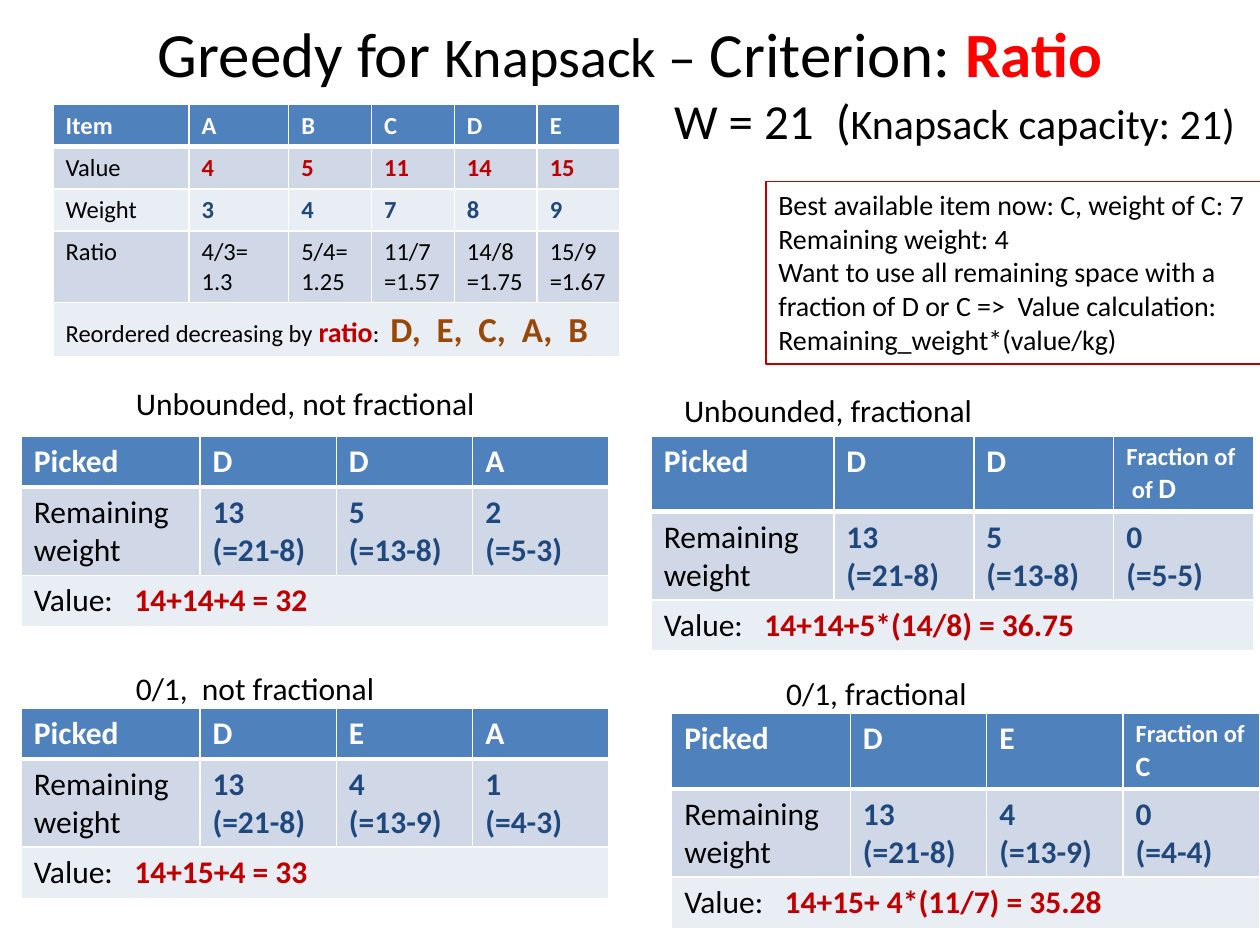
from typing import NamedTuple

from lxml import etree
from pptx import Presentation
from pptx import util as u
from pptx.dml.color import RGBColor
from pptx.enum import shapes, text
from pptx.oxml import ns

FONT = "Calibri"
COLORS = {
    "black": "000000",
    "white": "FFFFFF",
    "red": "FF0000",
    "value": "C00000",
    "weight": "1F497D",
    "order": "984807",
    "header": "4F81BD",
    "band_dark": "D0D8E8",
    "band_light": "E9EDF4",
}


class Span(NamedTuple):
    text: str
    size: int
    color: str = "black"
    bold: bool = False


def rgb(name):
    return RGBColor.from_string(COLORS[name])


def lines(content, size, color="black", bold=False):
    """Turn each line of a string into a paragraph of one span."""
    return [[Span(line, size, color, bold)] for line in content.split("\n")]


def write(frame, paras):
    for index, spans in enumerate(paras):
        para = frame.paragraphs[0] if index == 0 else frame.add_paragraph()
        for span in spans:
            run = para.add_run()
            run.text = span.text
            run.font.name = FONT
            run.font.size = u.Pt(span.size)
            run.font.bold = span.bold
            run.font.color.rgb = rgb(span.color)


def add_title(page, spans):
    box = page.shapes.add_textbox(u.Cm(1.27), 0, u.Cm(22.86), u.Cm(2.12))
    frame = box.text_frame
    frame.word_wrap = True
    frame.vertical_anchor = text.MSO_ANCHOR.MIDDLE
    write(frame, [spans])
    frame.paragraphs[0].alignment = text.PP_ALIGN.CENTER


def add_label(page, left, top, width, height, paras):
    box = page.shapes.add_textbox(u.Cm(left), u.Cm(top), u.Cm(width), u.Cm(height))
    box.text_frame.word_wrap = False
    box.text_frame.auto_size = text.MSO_AUTO_SIZE.SHAPE_TO_FIT_TEXT
    write(box.text_frame, paras)


def add_note(page, left, top, width, height, paras):
    """Add an outlined, unfilled rectangle with left-aligned text."""
    box = page.shapes.add_shape(
        shapes.MSO_SHAPE.RECTANGLE, u.Cm(left), u.Cm(top), u.Cm(width), u.Cm(height)
    )
    box.shadow.inherit = False
    box.fill.background()
    box.line.color.rgb = rgb("value")
    box.line.width = u.Pt(0.75)
    frame = box.text_frame
    frame.word_wrap = False
    frame.auto_size = text.MSO_AUTO_SIZE.SHAPE_TO_FIT_TEXT
    frame.vertical_anchor = text.MSO_ANCHOR.TOP
    write(frame, paras)
    for para in frame.paragraphs:
        para.alignment = text.PP_ALIGN.LEFT


def set_borders(cell, top, bottom):
    """Draw white cell edges; top and bottom are widths in points."""
    properties = cell._tc.get_or_add_tcPr()
    for edge, width in (("L", 1), ("R", 1), ("T", top), ("B", bottom)):
        line = etree.SubElement(properties, ns.qn(f"a:ln{edge}"), w=str(u.Pt(width)))
        fill = etree.SubElement(line, ns.qn("a:solidFill"))
        etree.SubElement(fill, ns.qn("a:srgbClr"), val=COLORS["white"])


def add_grid(page, left, top, columns, row_height, rows):
    """Add a banded table whose last row is one merged cell."""
    grid = page.shapes.add_table(
        len(rows), len(columns), u.Cm(left), u.Cm(top),
        u.Cm(sum(columns)), u.Cm(row_height * len(rows)),
    ).table
    for column, width in zip(grid.columns, columns):
        column.width = u.Cm(width)
    last = len(rows) - 1
    grid.cell(last, 0).merge(grid.cell(last, len(columns) - 1))
    for r, row in enumerate(rows):
        band = "header" if r == 0 else ("band_light", "band_dark")[r % 2]
        for c in range(len(columns)):
            cell = grid.cell(r, c)
            set_borders(cell, top=3 if r == 1 else 1, bottom=3 if r == 0 else 1)
            cell.fill.solid()
            cell.fill.fore_color.rgb = rgb(band)
            if c < len(row):
                write(cell.text_frame, row[c])


def add_items(page):
    def row(name, values, color="black", bold=True):
        return [lines(name, 14)] + [lines(value, 14, color, bold) for value in values]

    ratios = ["4/3= 1.3", "5/4=\n1.25", "11/7=1.57", "14/8=1.75", "15/9=1.67"]
    order = [
        Span("Reordered decreasing by ", 14),
        Span("ratio", 16, "value", True),
        Span(":  ", 14),
        Span("D,  E,  C,  A,  B", 20, "order", True),
    ]
    rows = [
        [lines(name, 14, "white", True) for name in ["Item", *"ABCDE"]],
        row("Value", ["4", "5", "11", "14", "15"], "value"),
        row("Weight", "34789", "weight"),
        row("Ratio", ratios, bold=False),
        [[order]],
    ]
    add_grid(page, 1.07, 2.11, [2.74, 2.01] + [1.67] * 4, 0.79, rows)


def add_solution(page, left, top, columns, picked, remaining, total):
    """Add the picks of one variant; a longer last pick is a fraction."""
    header = [lines(name, 18, "white", True) for name in ["Picked", *picked[:-1]]]
    prefix, item = picked[-1][:-1], picked[-1][-1]
    if prefix:
        header.append([[Span(prefix, 14, "white", True), Span(item, 16, "white", True)]])
    else:
        header.append(lines(item, 18, "white", True))
    rows = [
        header,
        [lines("Remaining weight", 18)]
        + [lines(step, 18, "weight", True) for step in remaining],
        [[[Span("Value:   ", 18), Span(total, 18, "value", True)]]],
    ]
    add_grid(page, left, top, columns, 1.03, rows)


def main():
    deck = Presentation()
    deck.slide_width, deck.slide_height = u.Cm(25.4), u.Cm(19.05)
    page = deck.slides.add_slide(deck.slide_layouts[6])

    add_title(page, [
        Span("Greedy for ", 36),
        Span("Knapsack – ", 32),
        Span("Criterion: ", 36),
        Span("Ratio", 36, "red", True),
    ])
    add_items(page)

    narrow = [3.6] + [2.75] * 3
    wide = [3.68] + [2.82] * 3
    first, second, third = "13\n(=21-8)", "5\n(=13-8)", "4\n(=13-9)"
    solutions = [
        (0.43, 8.79, narrow, ["D", "D", "A"],
         [first, second, "2\n(=5-3)"], "14+14+4 = 32"),
        (13.13, 8.79, wide, ["D", "D", "Fraction of  of D"],
         [first, second, "0\n(=5-5)"], "14+14+5*(14/8) = 36.75"),
        (0.43, 14.27, narrow, ["D", "E", "A"],
         [first, third, "1\n(=4-3)"], "14+15+4 = 33"),
        (13.54, 14.38, narrow, ["D", "E", "Fraction of C"],
         [first, third, "0\n(=4-4)"], "14+15+ 4*(11/7) = 35.28"),
    ]
    for solution in solutions:
        add_solution(page, *solution)

    labels = [
        (2.49, 7.62, 7.62, "Unbounded, not fractional"),
        (13.54, 7.75, 6.4, "Unbounded, fractional"),
        (2.49, 13.36, 5.59, "0/1,  not fractional"),
        (15.6, 13.46, 4.19, "0/1, fractional"),
    ]
    for left, top, width, label in labels:
        add_label(page, left, top, width, 1.03, lines(label, 18))

    capacity = [Span("W = 21  (", 28), Span("Knapsack capacity: 21)", 24)]
    add_label(page, 13.34, 1.7, 11.94, 1.45, [capacity])
    add_note(page, 15.44, 3.66, 10.03, 3.68, lines(
        "Best available item now: C, weight of C: 7\n"
        "Remaining weight: 4\n"
        "Want to use all remaining space with a\n"
        "fraction of D or C =>  Value calculation:\n"
        "Remaining_weight*(value/kg)", 16))

    deck.save("out.pptx")


if __name__ == "__main__":
    main()
